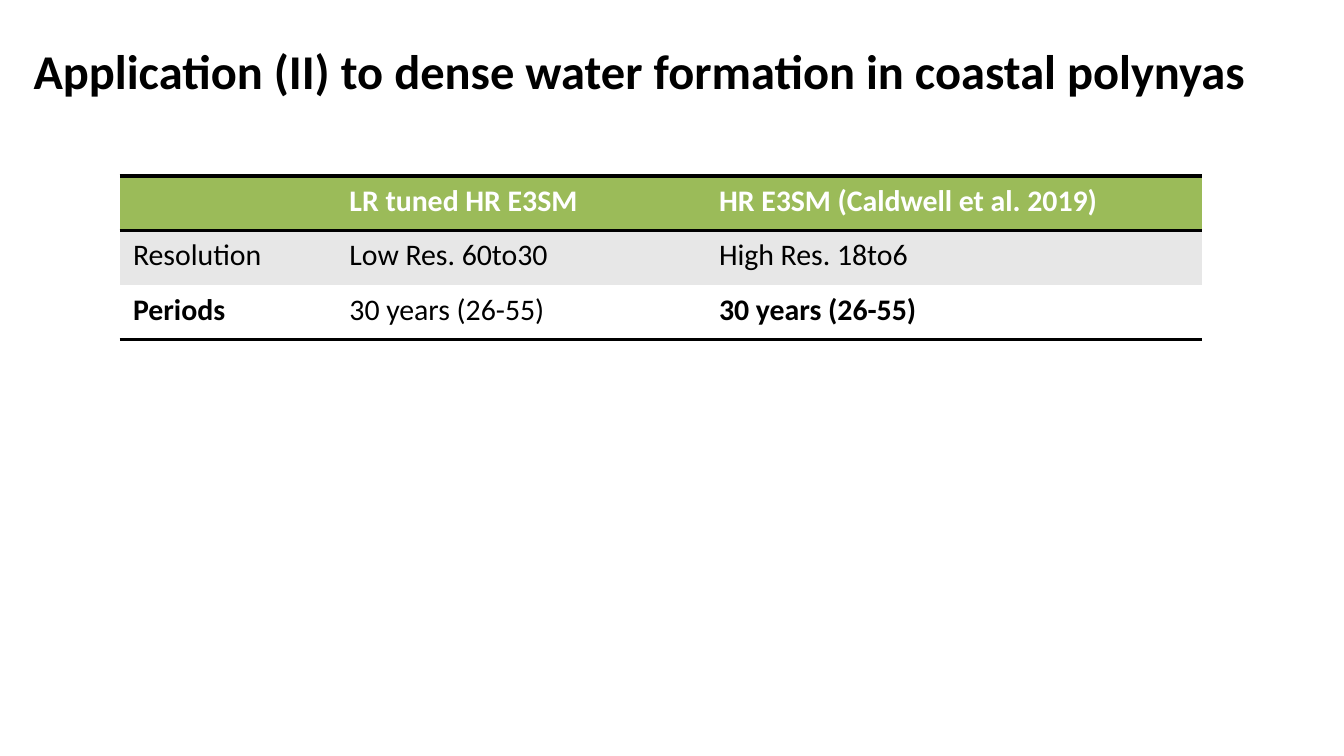
from pptx import Presentation
from pptx import util as u
from pptx.dml.color import RGBColor
from pptx.enum import text
from pptx.oxml import parse_xml
from pptx.oxml.ns import nsdecls

BLACK = RGBColor(0x00, 0x00, 0x00)
WHITE = RGBColor(0xFF, 0xFF, 0xFF)
GREEN = RGBColor(0x9B, 0xBB, 0x59)
GREY = RGBColor(0xE7, 0xE7, 0xE7)

COLUMN_WIDTHS = [1.61, 2.75, 3.69]
TABLE_HEIGHT = 1.22
ROWS = [
    ["", "LR tuned HR E3SM", "HR E3SM (Caldwell et al. 2019)"],
    ["Resolution", "Low Res. 60to30", "High Res. 18to6"],
    ["Periods", "30 years (26-55)", "30 years (26-55)"],
]
ROW_FILLS = [GREEN, GREY, WHITE]
BOLD_CELLS = {(0, 1), (0, 2), (2, 0), (2, 2)}
RULED_EDGES = {0, 1, len(ROWS)}


class SlideBuilder:
    """Holds the style and the current slide, and draws each kind of element."""

    font = "Calibri"
    title_size = 26
    table_size = 16
    rule_width = 2

    def __init__(self, deck):
        self.page = deck.slides.add_slide(deck.slide_layouts[5])

    def format_text(self, para, size, color, bold):
        for span in para.runs:
            span.font.name = self.font
            span.font.size = u.Pt(size)
            span.font.bold = bold
            span.font.color.rgb = color

    def title(self, wording, left, top, width, height):
        box = self.page.shapes.title
        box.left, box.top = u.Inches(left), u.Inches(top)
        box.width, box.height = u.Inches(width), u.Inches(height)
        frame = box.text_frame
        frame.text = wording
        frame.word_wrap = True
        frame.auto_size = text.MSO_AUTO_SIZE.NONE
        frame.vertical_anchor = text.MSO_ANCHOR.BOTTOM
        frame.margin_left = frame.margin_right = 0
        frame.margin_top = frame.margin_bottom = 0
        para = frame.paragraphs[0]
        para.alignment = text.PP_ALIGN.LEFT
        self.format_text(para, self.title_size, BLACK, True)

    def borders(self, cell, ruled_sides):
        properties = cell._tc.get_or_add_tcPr()
        for index, side in enumerate("LRTB"):
            paint = "<a:noFill/>"
            if side in ruled_sides:
                paint = f'<a:solidFill><a:srgbClr val="{BLACK}"/></a:solidFill>'
            line = f'<a:ln{side} {nsdecls("a")} w="{u.Pt(self.rule_width)}">{paint}</a:ln{side}>'
            properties.insert(index, parse_xml(line))

    def table(self, left, top):
        frame = self.page.shapes.add_table(
            len(ROWS), len(COLUMN_WIDTHS), u.Inches(left), u.Inches(top),
            u.Inches(sum(COLUMN_WIDTHS)), u.Inches(TABLE_HEIGHT))
        grid = frame.table
        grid.first_row = grid.horz_banding = False
        for column, width in zip(grid.columns, COLUMN_WIDTHS):
            column.width = u.Inches(width)
        for r, row in enumerate(ROWS):
            grid.rows[r].height = u.Inches(TABLE_HEIGHT / len(ROWS))
            sides = [side for side, edge in (("T", r), ("B", r + 1)) if edge in RULED_EDGES]
            for c, wording in enumerate(row):
                cell = grid.cell(r, c)
                cell.text_frame.text = wording
                cell.fill.solid()
                cell.fill.fore_color.rgb = ROW_FILLS[r]
                self.borders(cell, sides)
                color = BLACK if r else WHITE
                self.format_text(cell.text_frame.paragraphs[0], self.table_size, color,
                                 (r, c) in BOLD_CELLS)


def main():
    deck = Presentation()
    deck.slide_width = u.Inches(10)
    deck.slide_height = deck.slide_width * 9 // 16
    builder = SlideBuilder(deck)
    builder.title("Application (II) to dense water formation in coastal polynyas",
                  0.25, 0.28, 9.49, 0.46)
    builder.table(0.89, 1.31)
    deck.save("out.pptx")


if __name__ == "__main__":
    main()
